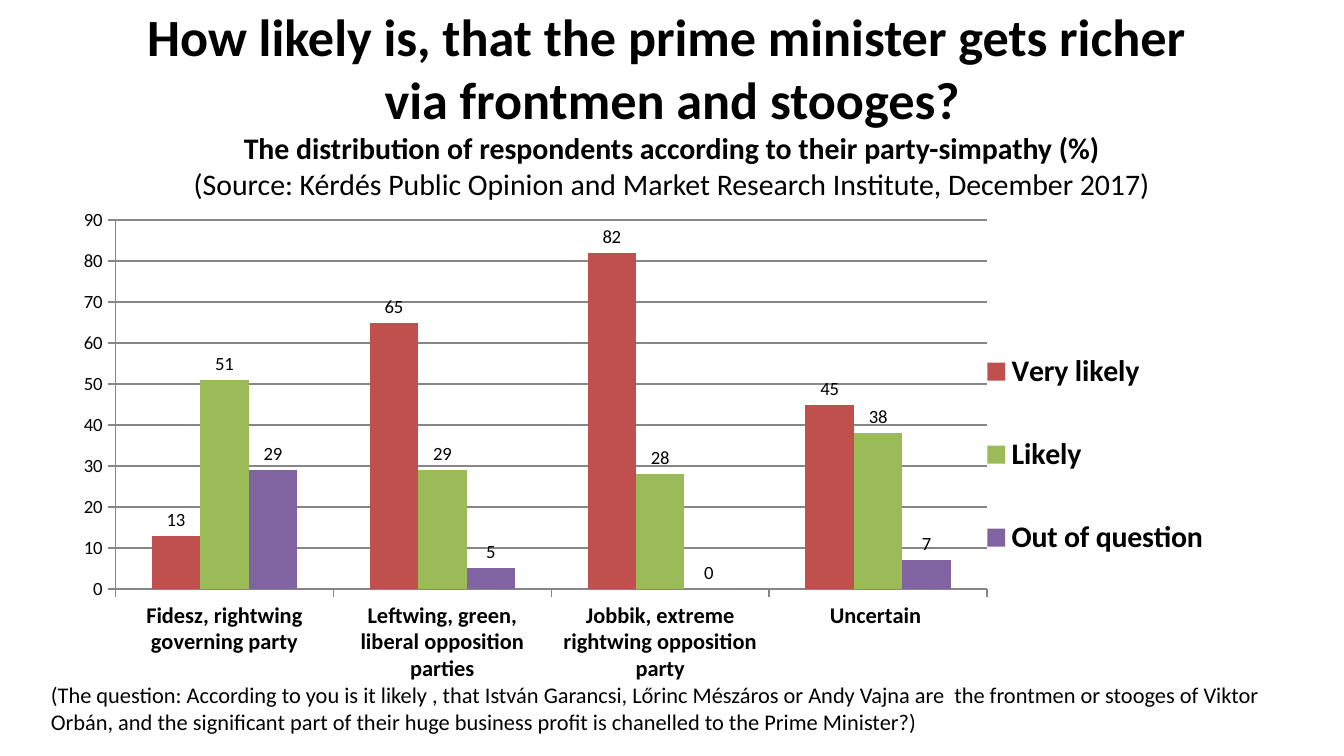
import pptx
import pptx.chart.data
import pptx.dml.color
import pptx.enum.chart
import pptx.enum.text
import pptx.oxml
import pptx.oxml.ns
import pptx.util
from pptx.util import Inches

COLORS = {
    "text": "000000",
    "grid": "868686",
    "Very likely": "C0504D",
    "Likely": "9BBB59",
    "Out of question": "8064A2",
}
FONT = "Calibri"


def rgb(name):
    return pptx.dml.color.RGBColor.from_string(COLORS[name])


def set_layout(parent, position, x, y, width, height, inner=False):
    """Place a chart part by fractions of the chart's size."""
    for old in parent.findall(pptx.oxml.ns.qn("c:layout")):
        parent.remove(old)
    target = '<c:layoutTarget val="inner"/>' if inner else ""
    values = {"x": x, "y": y, "w": width, "h": height}
    modes = "".join(f'<c:{key}Mode val="edge"/>' for key in "xy")
    sizes = "".join(f'<c:{key} val="{value}"/>' for key, value in values.items())
    parent.insert(position, pptx.oxml.parse_xml(
        f'<c:layout {pptx.oxml.ns.nsdecls("c")}><c:manualLayout>'
        f"{target}{modes}{sizes}</c:manualLayout></c:layout>"))


class SlideBuilder:
    def __init__(self, presentation):
        self.slide = presentation.slides.add_slide(presentation.slide_layouts[5])

    def style(self, font, size, bold=False):
        font.name = FONT
        font.size = pptx.util.Pt(size)
        font.bold = bold
        font.color.rgb = rgb("text")

    def title(self, lines, left, top, width, height):
        shape = self.slide.shapes.title
        shape.left, shape.top = Inches(left), Inches(top)
        shape.width, shape.height = Inches(width), Inches(height)
        frame = shape.text_frame
        frame.text = "\n".join(text for text, size, bold in lines)
        frame.auto_size = pptx.enum.text.MSO_AUTO_SIZE.NONE
        frame.vertical_anchor = pptx.enum.text.MSO_ANCHOR.TOP
        for paragraph, (text, size, bold) in zip(frame.paragraphs, lines):
            paragraph.alignment = pptx.enum.text.PP_ALIGN.CENTER
            self.style(paragraph.font, size, bold)

    def text(self, text, size, left, top, width, height):
        box = self.slide.shapes.add_textbox(
            Inches(left), Inches(top), Inches(width), Inches(height))
        box.text_frame.word_wrap = True
        paragraph = box.text_frame.paragraphs[0]
        paragraph.text = text
        self.style(paragraph.font, size)

    def column_chart(self, categories, series, left, top, width, height):
        data = pptx.chart.data.CategoryChartData()
        data.categories = categories
        for name, values in series.items():
            data.add_series(name, values)
        chart = self.slide.shapes.add_chart(
            pptx.enum.chart.XL_CHART_TYPE.COLUMN_CLUSTERED,
            Inches(left), Inches(top), Inches(width), Inches(height), data).chart
        chart.has_title = False
        self.style(chart.font, 10)

        # Columns and value labels
        plot = chart.plots[0]
        plot.gap_width = 150
        plot.overlap = 0
        plot.vary_by_categories = False
        for column in plot.series:
            column.format.fill.solid()
            column.format.fill.fore_color.rgb = rgb(column.name)
            labels = column.data_labels
            labels.show_value = True
            labels.position = pptx.enum.chart.XL_LABEL_POSITION.OUTSIDE_END

        # Axes
        value_axis, category_axis = chart.value_axis, chart.category_axis
        value_axis.minimum_scale, value_axis.maximum_scale = 0, 90
        value_axis.major_unit = 10
        value_axis.has_major_gridlines = True
        self.style(value_axis.tick_labels.font, 10)
        self.style(category_axis.tick_labels.font, 12, True)
        for axis in (value_axis, category_axis):
            axis.major_tick_mark = pptx.enum.chart.XL_TICK_MARK.OUTSIDE
        for part in (value_axis, category_axis, value_axis.major_gridlines):
            part.format.line.color.rgb = rgb("grid")
            part.format.line.width = pptx.util.Pt(0.75)

        # Legend and plot placement
        chart.has_legend = True
        chart.legend.position = pptx.enum.chart.XL_LEGEND_POSITION.RIGHT
        chart.legend.include_in_layout = False
        self.style(chart.legend.font, 16, True)
        plot_area = chart.element.find(".//" + pptx.oxml.ns.qn("c:plotArea"))
        legend = chart.element.find(".//" + pptx.oxml.ns.qn("c:legend"))
        set_layout(plot_area, 0, 0.04, 0.023, 0.742, 0.711, inner=True)
        set_layout(legend, 1, 0.764, 0.19, 0.22, 0.57)


def main():
    presentation = pptx.Presentation()
    presentation.slide_width = Inches(10)
    presentation.slide_height = Inches(10 * 9 / 16)
    builder = SlideBuilder(presentation)

    # Heading
    builder.title([
        ("How likely is, that the prime minister gets richer ", 28, True),
        ("via frontmen and stooges?", 28, True),
        ("The distribution of respondents according to their party-simpathy (%)", 16, True),
        ("(Source: Kérdés Public Opinion and Market Research Institute, December 2017)",
         16, False),
    ], 0, -0.02, 10, 1.58)

    # Question asked
    builder.text(
        "(The question: According to you is it likely , that István Garancsi, "
        "Lőrinc Mészáros or Andy Vajna are  the frontmen or stooges of Viktor Orbán, "
        "and the significant part of their huge business profit is chanelled to the "
        "Prime Minister?)", 12, 0.28, 5.02, 9.45, 0.5)

    # Answers by party
    builder.column_chart(
        ["Fidesz, rightwing governing party",
         "Leftwing, green, liberal opposition parties",
         "Jobbik, extreme rightwing opposition party",
         "Uncertain "],
        {"Very likely": (13, 65, 82, 45),
         "Likely": (51, 29, 28, 38),
         "Out of question": (29, 5, 0, 7)},
        0.51, 1.55, 8.74, 3.86)

    presentation.save("out.pptx")


if __name__ == "__main__":
    main()
